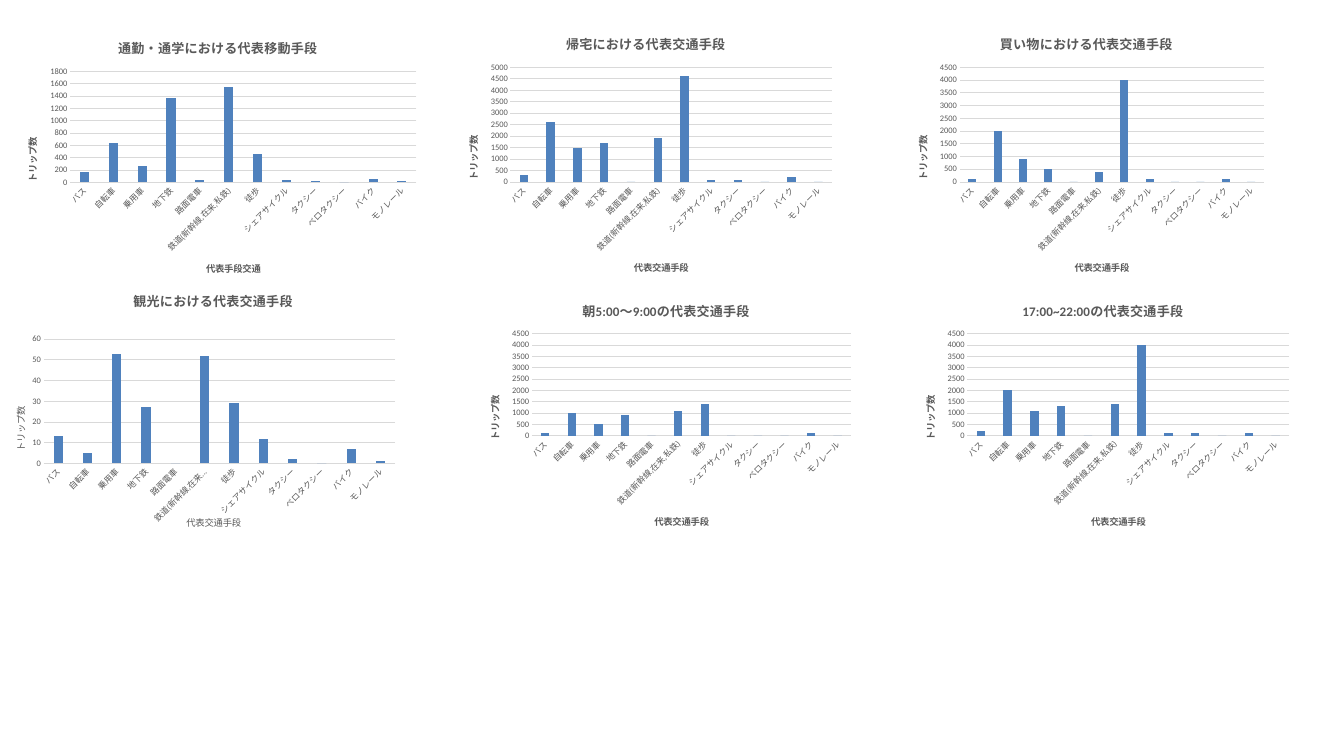
import pptx
import pptx.chart.data
import pptx.dml.color
import pptx.enum.chart
import pptx.oxml
import pptx.util
from lxml import etree

Pt = pptx.util.Pt
RGB = pptx.dml.color.RGBColor
BLACK = RGB(0x00, 0x00, 0x00)
GREY = RGB(0x59, 0x59, 0x59)
RULE = RGB(0xD9, 0xD9, 0xD9)
BLUE = RGB(0x4F, 0x81, 0xBD)

MODES = ["バス", "自転車", "乗用車", "地下鉄", "路面電車", "鉄道(新幹線,在来,私鉄)", "徒歩",
         "シェアサイクル", "タクシー", "ベロタクシー", "バイク", "モノレール"]
TRIPS = "トリップ数"
MEANS = "代表交通手段"
CHARTS = [
    dict(title="通勤・通学における代表移動手段", label="代表手段交通", box=(12, 27.4, 443, 282),
         top=1800, step=200, vals=[160, 640, 260, 1360, 40, 1550, 460, 40, 20, 0, 60, 30]),
    dict(title="帰宅における代表交通手段", box=(484.5, 23, 415, 286),
         top=5000, step=500, vals=[300, 2600, 1500, 1700, 0, 1900, 4600, 100, 100, 0, 200, 0]),
    dict(title="買い物における代表交通手段", box=(966, 23, 396, 286),
         top=4500, step=500, vals=[100, 2000, 900, 500, 0, 400, 4000, 100, 0, 0, 100, 0]),
    dict(title="観光における代表交通手段", box=(12, 298, 433, 272), bold=False,
         area=(0.08, 0.24, 0.87, 0.49),
         top=60, step=10, vals=[13, 5, 53, 27, 0, 52, 29, 12, 2, 0, 7, 1]),
    dict(title="17:00~22:00の代表交通手段", box=(974, 309, 415.5, 271.5),
         top=4500, step=500, vals=[200, 2000, 1100, 1300, 0, 1400, 4000, 100, 100, 0, 100, 0]),
    dict(title="朝5:00～9:00の代表交通手段", box=(507.5, 309, 412.5, 271.5),
         top=4500, step=500, vals=[100, 1000, 500, 900, 0, 1100, 1400, 0, 0, 0, 100, 0]),
]


class Deck:
    """Holds the style and the current slide."""

    face = "Calibri"

    def __init__(self, wide, high):
        self.show = pptx.Presentation()
        self.show.slide_width = Pt(wide)
        self.show.slide_height = Pt(high)
        self.slide = self.show.slides.add_slide(self.show.slide_layouts[6])

    def style(self, font, size, color, bold=False):
        font.name = self.face
        font.size = Pt(size)
        font.bold = bold
        font.color.rgb = color

    def label(self, frame, text, size, bold, turn=0):
        frame.text = text
        self.style(frame.paragraphs[0].runs[0].font, size, GREY, bold)
        body = frame._txBody.bodyPr
        body.set("rot", str(turn * 60000))
        body.set("vert", "horz")

    def axis(self, axis, text, bold, turn):
        none = pptx.enum.chart.XL_TICK_MARK.NONE
        axis.major_tick_mark = axis.minor_tick_mark = none
        self.style(axis.tick_labels.font, 9, GREY)
        self.label(axis.axis_title.text_frame, text, 10, bold, turn)

    def place(self, chart, area):
        plot = chart._chartSpace.chart.plotArea
        for old in plot.findall(pptx.oxml.ns.qn("c:layout")):
            plot.remove(old)
        layout = etree.Element(pptx.oxml.ns.qn("c:layout"))
        inner = etree.SubElement(layout, pptx.oxml.ns.qn("c:manualLayout"))
        pairs = [("layoutTarget", "inner"), ("xMode", "edge"), ("yMode", "edge"),
                 *zip("xywh", area)]
        for tag, val in pairs:
            etree.SubElement(inner, pptx.oxml.ns.qn("c:" + tag), val=str(val))
        plot.insert(0, layout)

    def chart(self, title, box, top, step, vals, label=MEANS, bold=True, area=None):
        data = pptx.chart.data.CategoryChartData()
        data.categories = MODES
        data.add_series("Series 1", vals)
        kind = pptx.enum.chart.XL_CHART_TYPE.COLUMN_CLUSTERED
        chart = self.slide.shapes.add_chart(kind, *map(Pt, box), data).chart
        self.style(chart.font, 10, BLACK)
        chart.has_legend = False
        self.label(chart.chart_title.text_frame, title, 14, True)
        chart.chart_title.include_in_layout = False

        plot = chart.plots[0]
        plot.gap_width = 219
        plot.overlap = -27
        plot.vary_by_categories = False
        fill = plot.series[0].format.fill
        fill.solid()
        fill.fore_color.rgb = BLUE

        cat, val = chart.category_axis, chart.value_axis
        self.axis(cat, label, bold, 0)
        self.axis(val, TRIPS, bold, -90)
        cat._element.txPr.bodyPr.set("rot", str(-45 * 60000))
        val.minimum_scale = 0
        val.maximum_scale = top
        val.major_unit = step
        val.has_major_gridlines = True
        val.format.line.fill.background()
        for line in (cat.format.line, val.major_gridlines.format.line):
            line.color.rgb = RULE
            line.width = Pt(0.75)
        if area:
            self.place(chart, area)


def main():
    deck = Deck(1440, 810)
    for item in CHARTS:
        deck.chart(**item)
    deck.show.save("out.pptx")


if __name__ == "__main__":
    main()
